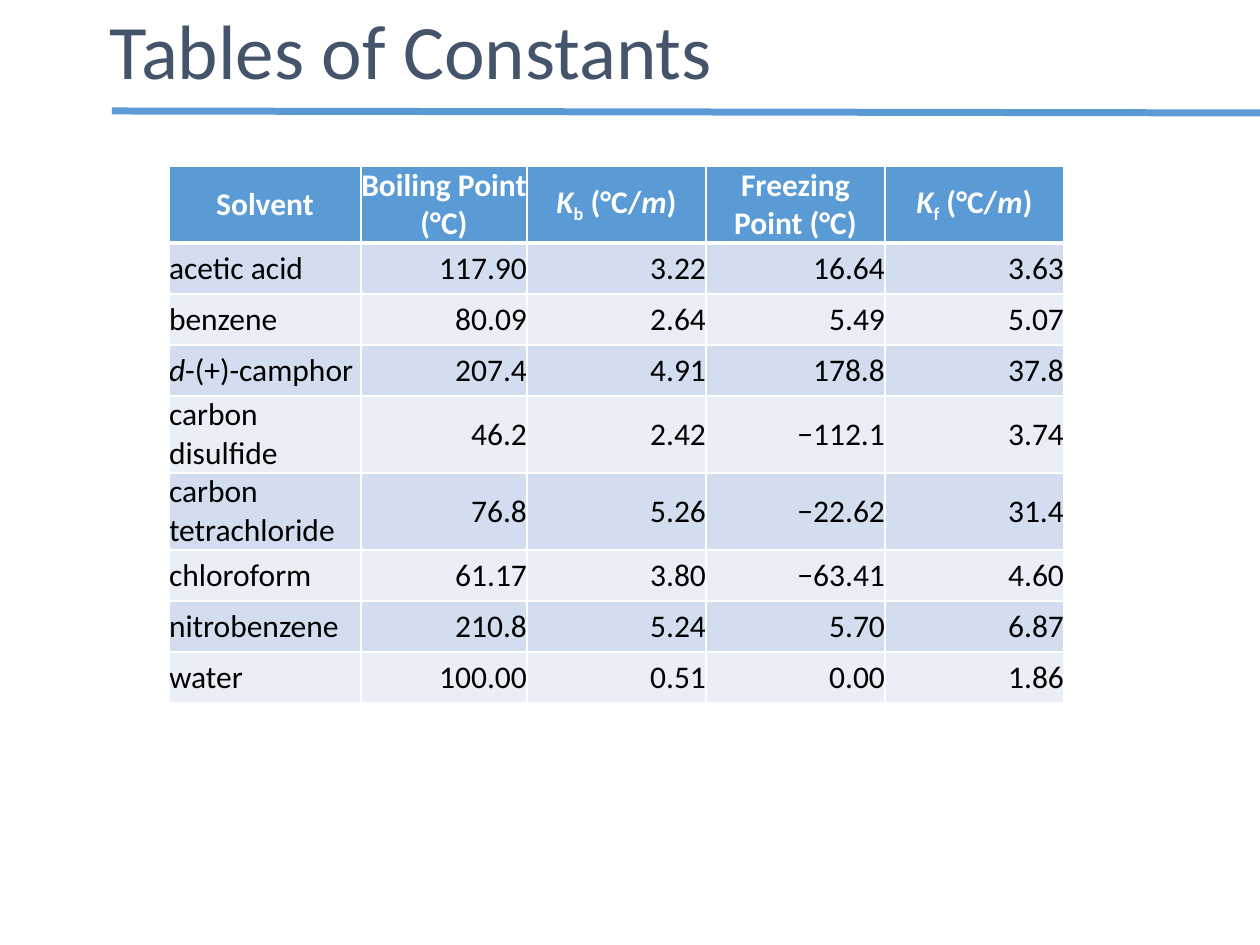
from lxml import etree
from pptx import Presentation
from pptx import util as u
from pptx.dml.color import RGBColor
from pptx.enum import shapes, text
from pptx.oxml import ns

EMU_PER_PX = 914400 / 126

SUBSCRIPT, ITALIC, PLAIN = "subscript", "italic", "plain"


def px(length):
    return u.Emu(round(length * EMU_PER_PX))


def rgb(hex_code):
    return RGBColor.from_string(hex_code)


def assign(target, values):
    for name, value in values.items():
        setattr(target, name, value)


def constant_heading(subscript):
    return [("K", ITALIC), (subscript, SUBSCRIPT), (" (°C/", PLAIN),
            ("m", ITALIC), (")", PLAIN)]


HEADINGS = ["Solvent", "Boiling Point (°C)", constant_heading("b"),
            "Freezing Point (°C)", constant_heading("f")]
SOLVENTS = [
    ["acetic acid", "117.90", "3.22", "16.64", "3.63"],
    ["benzene", "80.09", "2.64", "5.49", "5.07"],
    [[("d", ITALIC), ("-(+)-camphor", PLAIN)], "207.4", "4.91", "178.8", "37.8"],
    ["carbon disulfide", "46.2", "2.42", "−112.1", "3.74"],
    ["carbon tetrachloride", "76.8", "5.26", "−22.62", "31.4"],
    ["chloroform", "61.17", "3.80", "−63.41", "4.60"],
    ["nitrobenzene", "210.8", "5.24", "5.70", "6.87"],
    ["water", "100.00", "0.51", "0.00", "1.86"],
]


class ConstantsSlide:
    FONT = "Calibri"
    ACCENT, HEADING, WHITE, BLACK = "5B9BD5", "44546A", "FFFFFF", "000000"
    BANDS = ["D2DEEF", "EAEFF7"]

    def __init__(self, deck):
        self.slide = deck.slides.add_slide(deck.slide_layouts[5])

    def title(self, wording, left, top, width, height):
        title = self.slide.shapes.title
        assign(title, {"left": px(left), "top": px(top),
                       "width": px(width), "height": px(height)})
        frame = title.text_frame
        assign(frame, {"auto_size": text.MSO_AUTO_SIZE.NONE, "word_wrap": True,
                       "vertical_anchor": text.MSO_ANCHOR.BOTTOM})
        paragraph = frame.paragraphs[0]
        assign(paragraph, {"alignment": text.PP_ALIGN.LEFT, "line_spacing": 0.9})
        self.add_runs(paragraph, wording, 44, self.HEADING)

    def rule(self, start, end, weight):
        line = self.slide.shapes.add_connector(
            shapes.MSO_CONNECTOR.STRAIGHT, *map(px, start + end))
        line.line.color.rgb = rgb(self.ACCENT)
        line.line.width = u.Pt(weight)
        etree.SubElement(line._element.spPr, ns.qn("a:effectLst"))

    def table(self, rows, left, top, column_widths, row_height):
        table = self.slide.shapes.add_table(
            len(rows), len(column_widths), px(left), px(top),
            px(sum(column_widths)), px(row_height * len(rows))).table
        for column, width in zip(table.columns, column_widths):
            column.width = px(width)
        for row_index, row in enumerate(rows):
            table.rows[row_index].height = px(row_height)
            for column_index, content in enumerate(row):
                self.cell(table.cell(row_index, column_index), content,
                          row_index, column_index)

    def cell(self, cell, content, row_index, column_index):
        is_heading = row_index == 0
        assign(cell, {"margin_left": 0, "margin_right": 0, "margin_top": 0,
                      "margin_bottom": 0,
                      "vertical_anchor": text.MSO_ANCHOR.MIDDLE})
        paragraph = cell.text_frame.paragraphs[0]
        if is_heading:
            fill, color = self.ACCENT, self.WHITE
            paragraph.alignment = text.PP_ALIGN.CENTER
        else:
            fill, color = self.BANDS[(row_index - 1) % 2], self.BLACK
            paragraph.alignment = (text.PP_ALIGN.RIGHT if column_index
                                   else text.PP_ALIGN.LEFT)
        self.add_runs(paragraph, content, 18, color, is_heading)
        self.borders(cell, {"lnL": 1, "lnR": 1, "lnT": 3 if row_index == 1 else 1,
                            "lnB": 3 if is_heading else 1})
        cell.fill.solid()
        cell.fill.fore_color.rgb = rgb(fill)

    def borders(self, cell, weights):
        properties = cell._tc.get_or_add_tcPr()
        for edge, weight in weights.items():
            line = etree.SubElement(properties, ns.qn(f"a:{edge}"),
                                    w=str(u.Pt(weight)))
            solid = etree.SubElement(line, ns.qn("a:solidFill"))
            etree.SubElement(solid, ns.qn("a:srgbClr"), val=self.WHITE)

    def add_runs(self, paragraph, content, size, color, bold=False):
        """Accept a plain string or a list of (wording, style) pieces."""
        pieces = [(content, PLAIN)] if isinstance(content, str) else content
        for wording, style in pieces:
            run = paragraph.add_run()
            run.text = wording
            assign(run.font, {"name": self.FONT, "size": u.Pt(size),
                              "bold": bold, "italic": style == ITALIC})
            run.font.color.rgb = rgb(color)
            if style == SUBSCRIPT:
                run._r.get_or_add_rPr().set("baseline", "-25000")


def main():
    deck = Presentation()
    assign(deck, {"slide_width": px(1260), "slide_height": px(945)})
    constants = ConstantsSlide(deck)
    constants.rule((112, 111), (1266, 113), 4)
    constants.title("Tables of Constants", 97, -14, 1134, 116)
    constants.table([HEADINGS] + SOLVENTS, 169, 166, [192, 166, 179, 179, 179], 51)
    deck.save("out.pptx")


if __name__ == "__main__":
    main()
